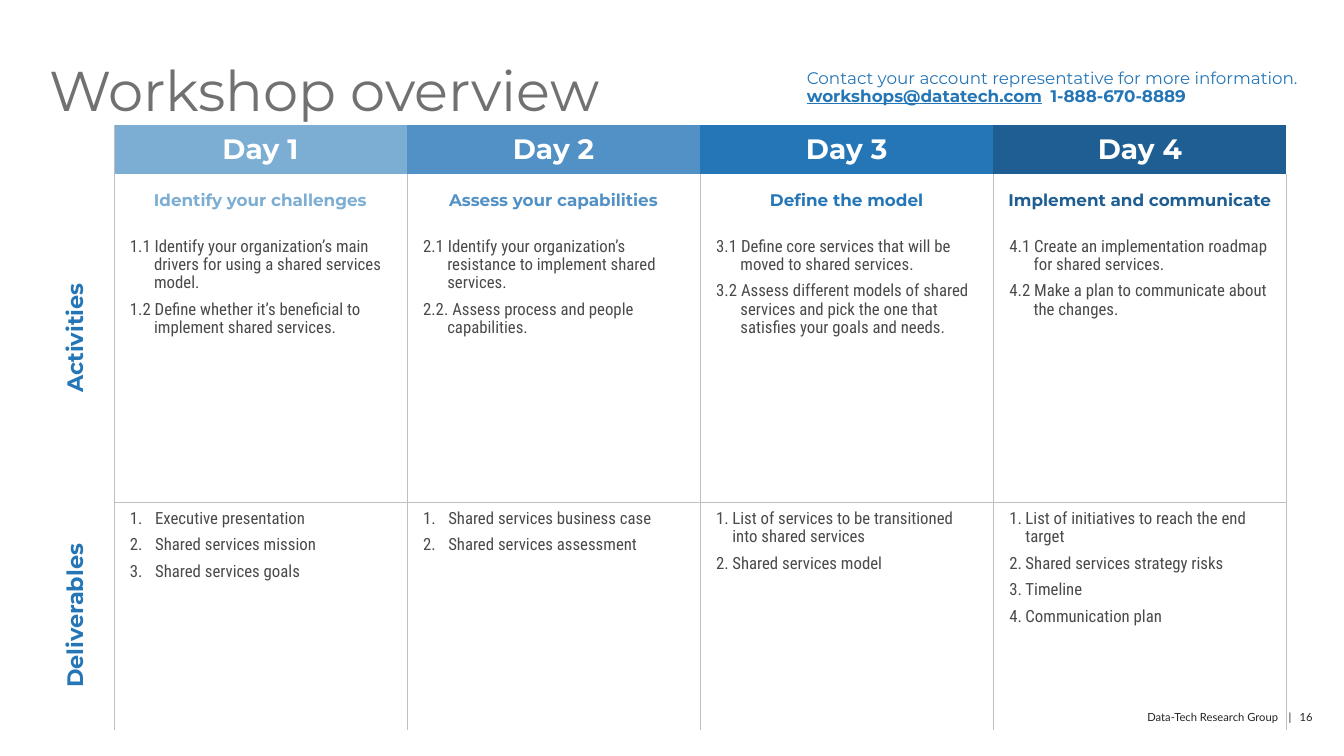
from dataclasses import dataclass

from lxml import etree
from pptx import Presentation
from pptx.dml.color import RGBColor
from pptx.enum.text import MSO_ANCHOR, MSO_AUTO_SIZE, PP_ALIGN
from pptx.oxml.ns import qn
from pptx.util import Inches, Pt

LEFT, CENTER = PP_ALIGN.LEFT, PP_ALIGN.CENTER
TOP, MIDDLE = MSO_ANCHOR.TOP, MSO_ANCHOR.MIDDLE
NO_AUTOFIT = MSO_AUTO_SIZE.NONE

HEADING_FONT, BODY_FONT, FOOTER_FONT = "Montserrat", "Roboto Condensed", "Lato"
BLUE, TITLE_GRAY, BODY_GRAY, BORDER_GRAY = "2576B7", "717171", "4A4A4A", "BFBFBF"
NO_STYLE_NO_GRID = "{2D5ABB26-0587-4C30-8999-92F81FD0307C}"

LABEL_WIDTH, DAY_WIDTH = 0.57, 2.91
ROW_HEIGHTS = (0.49, 0.55, 2.7, 2.26)
DAY_ROW, THEME_ROW, ACTIVITY_ROW, DELIVERABLE_ROW = range(4)
ACTIVITY_HANG = 0.24
THEME_MARGINS = (0.12, 0.16, 0.12, 0)
LIST_MARGINS = (0.16, 0.08, 0.16, 0.12)


@dataclass
class Day:
    name: str
    color: str
    theme: str
    activities: list[str]
    deliverables: list[str]
    number_hang: float


DAYS = [
    Day("Day 1", "7CAED4", "Identify your challenges",
        ["1.1 Identify your organization’s main drivers for using a shared services model.",
         "1.2 Define whether it’s beneficial to implement shared services."],
        ["Executive presentation", "Shared services mission", "Shared services goals"], 0.25),
    Day("Day 2", "5191C5", "Assess your capabilities",
        ["2.1 Identify your organization’s resistance to implement shared services.",
         "2.2. Assess process and people capabilities."],
        ["Shared services business case", "Shared services assessment"], 0.25),
    Day("Day 3", BLUE, "Define the model",
        ["3.1 Define core services that will be moved to shared services.",
         "3.2 Assess different models of shared services and pick the one that "
         "satisfies your goals and needs."],
        ["List of services to be transitioned into shared services",
         "Shared services model"], 0.16),
    Day("Day 4", "1E5E92", "Implement and communicate",
        ["4.1 Create an implementation roadmap for shared services.",
         "4.2 Make a plan to communicate about the changes."],
        ["List of initiatives to reach the end target", "Shared services strategy risks",
         "Timeline", "Communication plan"], 0.16),
]


def rgb(color: str) -> RGBColor:
    return RGBColor.from_string(color)


def set_font(font, name: str, size: float, color: str, bold: bool = False) -> None:
    font.name, font.size, font.bold = name, Pt(size), bold
    font.color.rgb = rgb(color)


def set_tab_stops(paragraph, stops: list[tuple[float, str]]) -> None:
    """Add tab stops, each a position in inches and an alignment code."""
    tab_list = etree.Element(qn("a:tabLst"))
    for position, alignment in stops:
        etree.SubElement(tab_list, qn("a:tab"), pos=str(Inches(position)), algn=alignment)
    properties = paragraph._p.get_or_add_pPr()
    default_font = properties.find(qn("a:defRPr"))
    if default_font is None:
        properties.append(tab_list)
    else:
        default_font.addprevious(tab_list)


def set_hanging_indent(paragraph, hang: float, numbered: bool) -> None:
    properties = paragraph._p.get_or_add_pPr()
    properties.set("marL", str(Inches(hang)))
    properties.set("indent", str(-Inches(hang)))
    if numbered:
        numbering = etree.Element(qn("a:buAutoNum"), type="arabicPeriod")
        properties.find(qn("a:defRPr")).addprevious(numbering)


def set_borders(cell, gray_sides: str) -> None:
    """Draw thin gray borders on the sides named by L, R, T and B; hide the rest."""
    properties = cell._tc.get_or_add_tcPr()
    for side in "LRTB":
        line = etree.SubElement(properties, qn(f"a:ln{side}"), w=str(Pt(0.25)))
        if side in gray_sides:
            fill = etree.SubElement(line, qn("a:solidFill"))
            etree.SubElement(fill, qn("a:srgbClr"), val=BORDER_GRAY)
        else:
            etree.SubElement(line, qn("a:noFill"))


def set_margins(cell, margins: tuple[float, float, float, float]) -> None:
    left, top, right, bottom = map(Inches, margins)
    cell.margin_left, cell.margin_top = left, top
    cell.margin_right, cell.margin_bottom = right, bottom


def write_heading(cell, text: str, size: float, color: str, anchor=TOP) -> None:
    cell.text = text
    cell.vertical_anchor = anchor
    paragraph = cell.text_frame.paragraphs[0]
    paragraph.alignment = CENTER
    set_font(paragraph.font, HEADING_FONT, size, color, bold=True)


def write_list(cell, items: list[str], hang: float, numbered: bool) -> None:
    set_margins(cell, LIST_MARGINS)
    cell.text = "\n".join(items)
    for paragraph in cell.text_frame.paragraphs:
        paragraph.line_spacing, paragraph.space_before = Pt(13), Pt(6)
        set_font(paragraph.font, BODY_FONT, 12, BODY_GRAY)
        set_hanging_indent(paragraph, hang, numbered)


def add_title(slide) -> None:
    title = slide.shapes.title
    title.left, title.top = Inches(0.39), Inches(0.58)
    title.width, title.height = Inches(7.4), Inches(0.59)
    frame = title.text_frame
    frame.text = "Workshop overview"
    frame.auto_size, frame.vertical_anchor = NO_AUTOFIT, TOP
    paragraph = frame.paragraphs[0]
    paragraph.alignment, paragraph.line_spacing = LEFT, 0.9
    set_font(paragraph.font, HEADING_FONT, 40, TITLE_GRAY)


def add_contact(slide) -> None:
    box = slide.shapes.add_textbox(Inches(7.91), Inches(0.64), Inches(5.09), Inches(0.48))
    box.text_frame.word_wrap = True
    paragraph = box.text_frame.paragraphs[0]
    paragraph.line_spacing = 0.9
    set_font(paragraph.font, HEADING_FONT, 12, BLUE)
    set_tab_stops(paragraph, [(2.42, "l")])
    paragraph.add_run().text = "Contact your account representative for more information."
    paragraph.add_line_break()
    for text, underlined in (("workshops@datatech.com", True), ("\t1-888-670-8889", False)):
        run = paragraph.add_run()
        run.text = text
        run.font.bold, run.font.underline = True, underlined


def add_footer(slide) -> None:
    box = slide.shapes.add_textbox(Inches(9.63), Inches(7.05), Inches(3.7), Inches(0.13))
    frame = box.text_frame
    frame.word_wrap = True
    frame.margin_left = frame.margin_top = frame.margin_right = frame.margin_bottom = 0
    frame.text = "\tData-Tech Research Group\t|\t16"
    paragraph = frame.paragraphs[0]
    set_font(paragraph.font, FOOTER_FONT, 8, "242424")
    set_tab_stops(paragraph, [(3.06, "r"), (3.16, "l"), (3.27, "l")])


def add_schedule(slide) -> None:
    width = LABEL_WIDTH + DAY_WIDTH * len(DAYS)
    frame = slide.shapes.add_table(len(ROW_HEIGHTS), len(DAYS) + 1, Inches(0.56), Inches(1.24),
                                   Inches(width), Inches(sum(ROW_HEIGHTS)))
    table = frame.table
    table.first_row = table.horz_banding = False
    table._tbl.tblPr.find(qn("a:tableStyleId")).text = NO_STYLE_NO_GRID
    for row, height in zip(table.rows, ROW_HEIGHTS):
        row.height = Inches(height)
    for index, column in enumerate(table.columns):
        column.width = Inches(DAY_WIDTH if index else LABEL_WIDTH)

    body_borders = {THEME_ROW: "LR", ACTIVITY_ROW: "LRB", DELIVERABLE_ROW: "LRT"}
    for row in range(len(ROW_HEIGHTS)):
        set_borders(table.cell(row, 0), "R")
        table.cell(row, 0).fill.background()
        for column, day in enumerate(DAYS, start=1):
            cell = table.cell(row, column)
            if row == DAY_ROW:
                set_borders(cell, "L" if column == 1 else "")
                cell.fill.solid()
                cell.fill.fore_color.rgb = rgb(day.color)
            else:
                set_borders(cell, body_borders[row])
                cell.fill.background()

    table.cell(THEME_ROW, 0).merge(table.cell(ACTIVITY_ROW, 0))
    for row, label in ((THEME_ROW, "Activities"), (DELIVERABLE_ROW, "Deliverables")):
        cell = table.cell(row, 0)
        write_heading(cell, label, 16, BLUE, MIDDLE)
        cell._tc.get_or_add_tcPr().set("vert", "vert270")

    for column, day in enumerate(DAYS, start=1):
        write_heading(table.cell(DAY_ROW, column), day.name, 20, "FFFFFF", MIDDLE)
        theme_cell = table.cell(THEME_ROW, column)
        write_heading(theme_cell, day.theme, 12, day.color)
        set_margins(theme_cell, THEME_MARGINS)
        write_list(table.cell(ACTIVITY_ROW, column), day.activities, ACTIVITY_HANG, False)
        write_list(table.cell(DELIVERABLE_ROW, column), day.deliverables, day.number_hang, True)


def main() -> None:
    presentation = Presentation()
    presentation.slide_width, presentation.slide_height = Inches(13.34), Inches(7.5)
    slide = presentation.slides.add_slide(presentation.slide_layouts[5])
    add_footer(slide)
    add_title(slide)
    add_schedule(slide)
    add_contact(slide)
    presentation.save("out.pptx")


if __name__ == "__main__":
    main()
